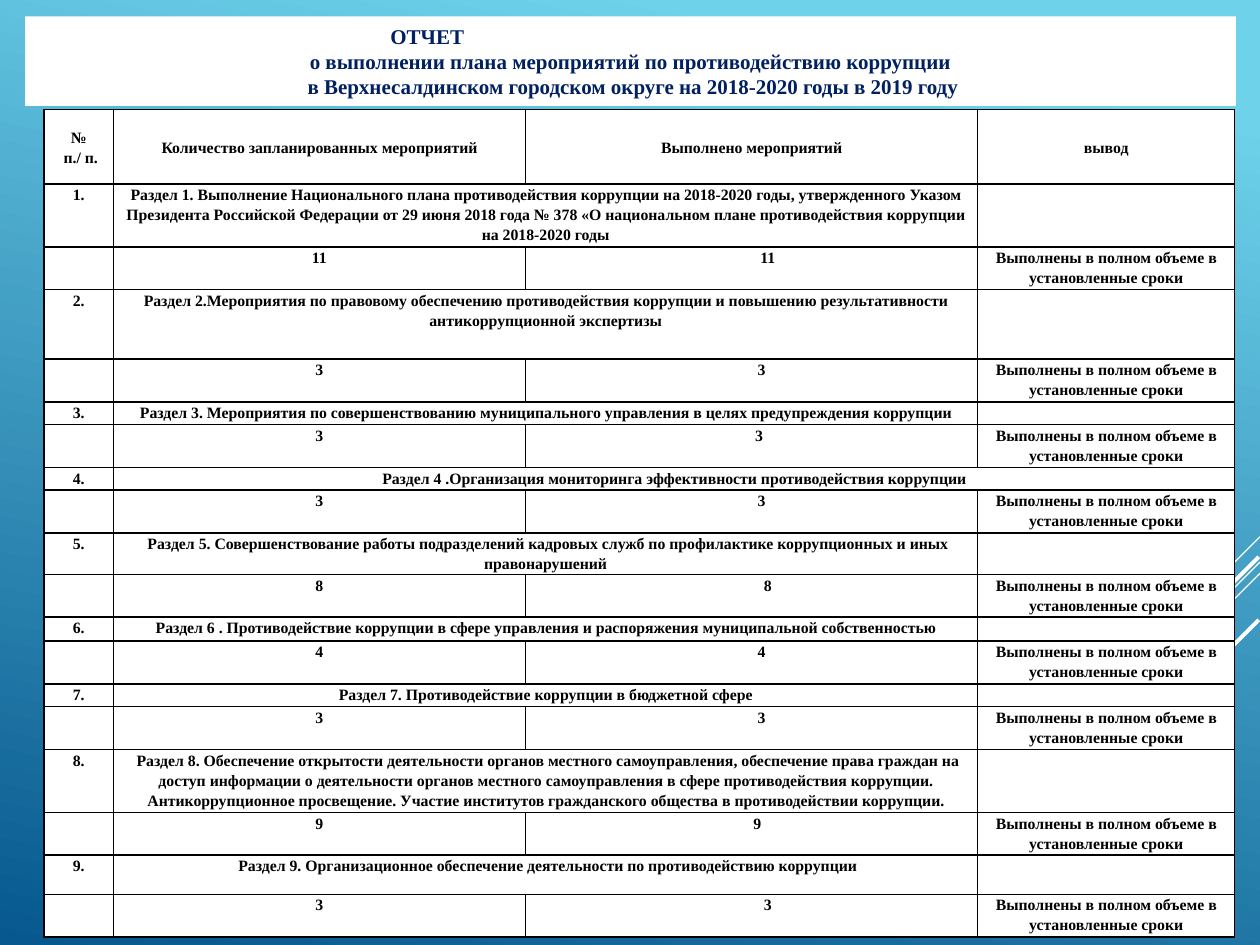
from lxml.etree import SubElement
from pptx import Presentation
from pptx.dml.color import RGBColor
from pptx.enum.shapes import MSO_CONNECTOR, MSO_SHAPE
from pptx.enum.text import MSO_ANCHOR, MSO_AUTO_SIZE, PP_ALIGN
from pptx.oxml.ns import qn
from pptx.util import Inches, Pt

FONT = "Times New Roman"
COLORS = {"paper": "FFFFFF", "ink": "000000", "title": "002060",
          "sky": "6ED2EB", "sea": "06588E"}
COLUMNS = [0.55, 3.27, 3.59, 2.04]
HEADER_HEIGHT, RESULT_HEIGHT = 0.59, 0.34
HEADERS = ["№\n п./ п.", "Количество запланированных мероприятий",
           "Выполнено мероприятий", "вывод"]
CONCLUSION = "Выполнены в полном объеме в установленные сроки"
WIDE_SECTION = 4
SECTIONS = [
    ("Раздел 1. Выполнение Национального плана противодействия коррупции на 2018-2020 годы, "
     "утвержденного Указом Президента Российской Федерации от 29 июня 2018 года № 378 "
     "«О национальном плане противодействия коррупции на 2018-2020 годы", 0.5, "11", 0.26),
    ("Раздел 2.Мероприятия по правовому обеспечению противодействия коррупции и повышению "
     "результативности антикоррупционной экспертизы", 0.55, "3", 0.16),
    ("Раздел 3. Мероприятия по совершенствованию муниципального управления в целях "
     "предупреждения коррупции", 0.18, "3", 0.12),
    ("Раздел 4 .Организация мониторинга эффективности противодействия коррупции",
     0.18, "3", 0.16),
    (" Раздел 5. Совершенствование работы подразделений кадровых служб по профилактике "
     "коррупционных и иных правонарушений", 0.33, "8", 0.26),
    ("Раздел 6 . Противодействие коррупции в сфере управления и распоряжения "
     "муниципальной собственностью", 0.19, "4", 0.16),
    ("Раздел 7. Противодействие коррупции в бюджетной сфере", 0.18, "3", 0.16),
    (" Раздел 8. Обеспечение открытости деятельности органов местного самоуправления, "
     "обеспечение права граждан на доступ информации о деятельности органов местного "
     "самоуправления в сфере противодействия коррупции. Антикоррупционное просвещение. "
     "Участие институтов гражданского общества в противодействии коррупции.", 0.5, "9", 0.09),
    (" Раздел 9. Организационное обеспечение деятельности по противодействию коррупции",
     0.31, "3", 0.26),
]
DIAGONALS = [(10, 4.26, 0.83, 0.75), (10, 4.46, 2.7, 0.75), (10, 4.55, 1.72, 0.75),
             (9.99, 4.42, 1.57, 2.25), (9.99, 4.92, 1.14, 2.25)]


def color(name):
    """Return the named colour."""
    return RGBColor.from_string(COLORS[name])


def style_paragraph(para, size, ink):
    """Centre a paragraph and set its bold font."""
    para.alignment = PP_ALIGN.CENTER
    para.font.name = FONT
    para.font.size = Pt(size)
    para.font.bold = True
    para.font.color.rgb = color(ink)


def paint_background(page):
    """Fill the page with a slanted blue gradient."""
    fill = page.background.fill
    fill.gradient()
    fill.gradient_angle = 258
    for stop, name, position in zip(fill.gradient_stops, ("sky", "sea"), (0.1, 1)):
        stop.color.rgb = color(name)
        stop.position = position


def add_diagonal(page, right, top, reach, width):
    """Draw a white line running down and left at 45 degrees."""
    line = page.shapes.add_connector(
        MSO_CONNECTOR.STRAIGHT, Inches(right), Inches(top),
        Inches(right - reach), Inches(top + reach))
    line.line.color.rgb = color("paper")
    line.line.width = Pt(width)
    SubElement(line._element.spPr, qn("a:effectLst"))


def add_title(page):
    """Add the white title panel."""
    box = page.shapes.add_shape(MSO_SHAPE.RECTANGLE, Inches(0.2), Inches(0.13),
                                Inches(9.61), Inches(0.71))
    box.shadow.inherit = False
    box.fill.solid()
    box.fill.fore_color.rgb = color("paper")
    box.line.fill.background()
    frame = box.text_frame
    frame.word_wrap = True
    frame.auto_size = MSO_AUTO_SIZE.SHAPE_TO_FIT_TEXT
    frame.text = ("ОТЧЕТ\nо выполнении плана мероприятий по противодействию коррупции\v"
                  " в Верхнесалдинском городском округе на 2018-2020 годы в 2019 году")
    for para in frame.paragraphs:
        style_paragraph(para, 12, "title")
    heading = frame.paragraphs[0]
    heading.alignment = PP_ALIGN.LEFT
    heading._p.get_or_add_pPr().set("marL", str(Inches(2.8)))


def add_borders(cell):
    """Give a cell black lines on all sides."""
    properties = cell._tc.get_or_add_tcPr()
    for side in ("a:lnL", "a:lnR", "a:lnT", "a:lnB"):
        line = SubElement(properties, qn(side), w=str(Pt(1)))
        fill = SubElement(line, qn("a:solidFill"))
        SubElement(fill, qn("a:srgbClr"), val=COLORS["ink"])


def fill_cell(cell, text, anchor, indent=0):
    """Write and style one table cell."""
    add_borders(cell)
    cell.fill.solid()
    cell.fill.fore_color.rgb = color("paper")
    cell.margin_left = cell.margin_right = Inches(0.06)
    cell.margin_top = cell.margin_bottom = 0
    cell.vertical_anchor = anchor
    cell.text = text
    for para in cell.text_frame.paragraphs:
        style_paragraph(para, 9, "ink")
        para.line_spacing = 1.15
        if indent:
            para._p.get_or_add_pPr().set("indent", str(Inches(indent)))
        if not text:
            SubElement(para._p, qn("a:endParaRPr"), sz="900")


def fill_row(row, texts, height, anchor=MSO_ANCHOR.TOP, indent=0):
    """Fill a row, indenting the completed count."""
    row.height = Inches(height)
    for column, (cell, text) in enumerate(zip(row.cells, texts)):
        fill_cell(cell, text, anchor, indent if column == 2 else 0)


def add_report_table(page):
    """Add the table with a heading row and a result row per section."""
    count = 1 + 2 * len(SECTIONS)
    heights = HEADER_HEIGHT + sum(section[1] + RESULT_HEIGHT for section in SECTIONS)
    table = page.shapes.add_table(count, len(COLUMNS), Inches(0.35), Inches(0.87),
                                  Inches(sum(COLUMNS)), Inches(heights)).table
    for column, width in zip(table.columns, COLUMNS):
        column.width = Inches(width)
    fill_row(table.rows[0], HEADERS, HEADER_HEIGHT, MSO_ANCHOR.MIDDLE)
    for number, (name, height, total, indent) in enumerate(SECTIONS, 1):
        top = 2 * number - 1
        fill_row(table.rows[top], [f"{number}.", name, "", ""], height)
        fill_row(table.rows[top + 1], ["", total, total, CONCLUSION],
                 RESULT_HEIGHT, indent=indent)
        last = 3 if number == WIDE_SECTION else 2
        table.cell(top, 1).merge(table.cell(top, last))


def main():
    """Build and save the slide."""
    deck = Presentation()
    deck.slide_width, deck.slide_height = Inches(10), Inches(7.5)
    page = deck.slides.add_slide(deck.slide_layouts[6])
    paint_background(page)
    for diagonal in DIAGONALS:
        add_diagonal(page, *diagonal)
    add_report_table(page)
    add_title(page)
    deck.save("out.pptx")


if __name__ == "__main__":
    main()
